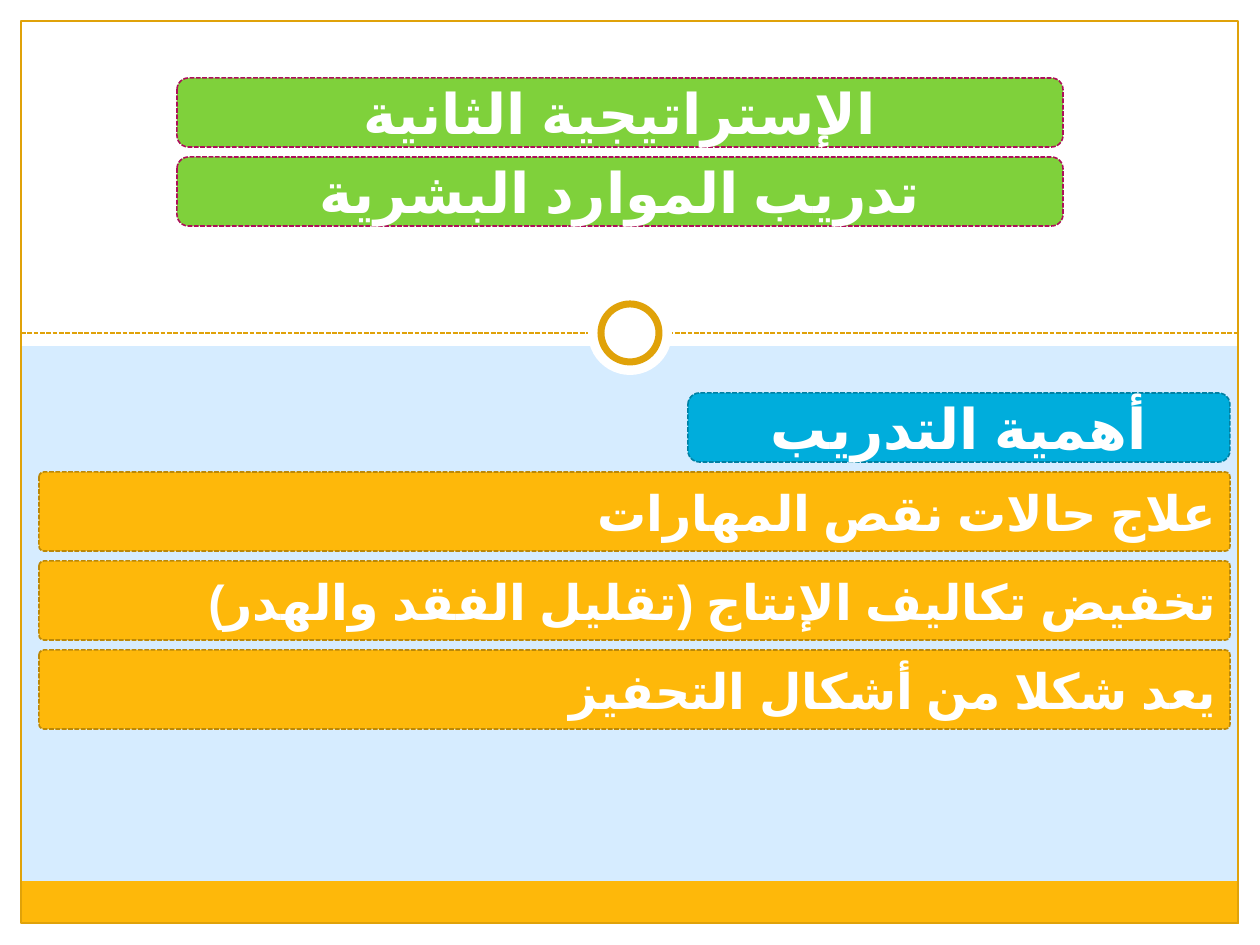
from lxml.etree import SubElement
from pptx import Presentation
from pptx.dml.color import RGBColor as RGB
from pptx.enum.dml import MSO_LINE as Dash
from pptx.enum.lang import MSO_LANGUAGE_ID as Lang
from pptx.enum.shapes import MSO_CONNECTOR as Link, MSO_SHAPE as Kind
from pptx.enum.text import MSO_ANCHOR as Anchor, PP_ALIGN as Align
from pptx.oxml.ns import qn
from pptx.util import Pt

PX = 914400 / 126
WIDE, HIGH, EDGE = 1260, 945, 21
COLORS = {
    "sky": "D6ECFF", "white": "FFFFFF", "gold": "FEB80A", "rim": "E0A209",
    "blue": "00ADDC", "navy": "0080A3", "brown": "BC8807",
    "green": "7FD13B", "plum": "AD105A",
}
HEADS = ["الإستراتيجية الثانية", "تدريب الموارد البشرية"]
TOPIC = "أهمية التدريب"
POINTS = [
    "علاج حالات نقص المهارات",
    "تخفيض تكاليف الإنتاج (تقليل الفقد والهدر)",
    "يعد شكلا من أشكال التحفيز",
]


def emu(*px):
    return [round(n * PX) for n in px]


def color(name):
    return RGB.from_string(COLORS[name])


def stroke(line, name, width, dash=None):
    line.color.rgb = color(name)
    line.width = Pt(width)
    if dash:
        line.dash_style = dash


def add_box(slide, kind, box, fill=None, rim=None, width=0.9, dash=None):
    shape = slide.shapes.add_shape(kind, *emu(*box))
    shape.shadow.inherit = False
    if fill:
        shape.fill.solid()
        shape.fill.fore_color.rgb = color(fill)
    else:
        shape.fill.background()
    if rim:
        stroke(shape.line, rim, width, dash)
    else:
        shape.line.fill.background()
    return shape


def add_bar(slide, box, text, fill, rim, size=32, align=Align.CENTER, bend=None):
    """Add a rounded, dash-edged bar with right-to-left text."""
    bar = add_box(slide, Kind.ROUNDED_RECTANGLE, box, fill, rim, dash=Dash.SQUARE_DOT)
    if bend is not None:
        bar.adjustments[0] = bend
    frame = bar.text_frame
    frame.word_wrap = True
    frame.vertical_anchor = Anchor.MIDDLE
    para = frame.paragraphs[0]
    para.alignment = align
    para._p.get_or_add_pPr().set("rtl", "1")
    run = para.add_run()
    run.text = text
    font = run.font
    font.name, font.size, font.bold = "Arial", Pt(size), True
    font.language_id = Lang.ARABIC
    font.color.rgb = color("white")
    SubElement(font._element, qn("a:cs"), typeface="Arial")


def add_rule(slide, left, right, y):
    rule = slide.shapes.add_connector(Link.STRAIGHT, *emu(left, y, right, y))
    stroke(rule.line, "rim", 0.9, Dash.SQUARE_DOT)
    SubElement(rule._element.spPr, qn("a:effectLst"))


def add_ring(slide, x, y):
    """Add the white disc and its gold ring around a centre."""
    for size, rim in ((84, None), (58, "rim")):
        box = (x - size / 2, y - size / 2, size, size)
        add_box(slide, Kind.OVAL, box, "white", rim, 4)


def add_frame(slide, wide, high, edge):
    """Add the white margins, foot band, border, rule and ring."""
    inner, split = wide - 2 * edge, 333
    margins = [
        (0, high - edge, wide, edge),
        (wide - edge, 0, edge, high),
        (0, 0, edge, high),
        (0, 0, wide, 346),
    ]
    for box in margins:
        add_box(slide, Kind.RECTANGLE, box, "white")
    foot = 43
    add_box(slide, Kind.RECTANGLE, (edge, high - edge - foot, inner, foot), "gold")
    add_rule(slide, edge, wide - edge, split)
    border = (edge, edge, inner - 1, high - 2 * edge - 1)
    add_box(slide, Kind.RECTANGLE, border, rim="rim", width=0.75)
    add_ring(slide, wide / 2, split)


def add_heads(slide, left, top, wide):
    for i, text in enumerate(HEADS):
        add_bar(slide, (left, top + i * 79, wide, 69), text, "green", "plum")


def add_points(slide, left, top, wide):
    """Add the topic bar at the right, with the points stacked below it."""
    topic = 542
    add_bar(slide, (left + wide - topic, top, topic, 69), TOPIC, "blue", "navy")
    for i, text in enumerate(POINTS):
        box = (left, top + 79 + i * 89, wide, 79)
        add_bar(slide, box, text, "gold", "brown", 28, Align.JUSTIFY, 0.06)


def main():
    deck = Presentation()
    deck.slide_width, deck.slide_height = emu(WIDE, HIGH)
    slide = deck.slides.add_slide(deck.slide_layouts[6])
    back = slide.background.fill
    back.solid()
    back.fore_color.rgb = color("sky")
    add_frame(slide, WIDE, HIGH, EDGE)
    add_points(slide, 39, 393, 1191)
    add_heads(slide, 177, 78, 886)
    deck.save("out.pptx")


if __name__ == "__main__":
    main()
